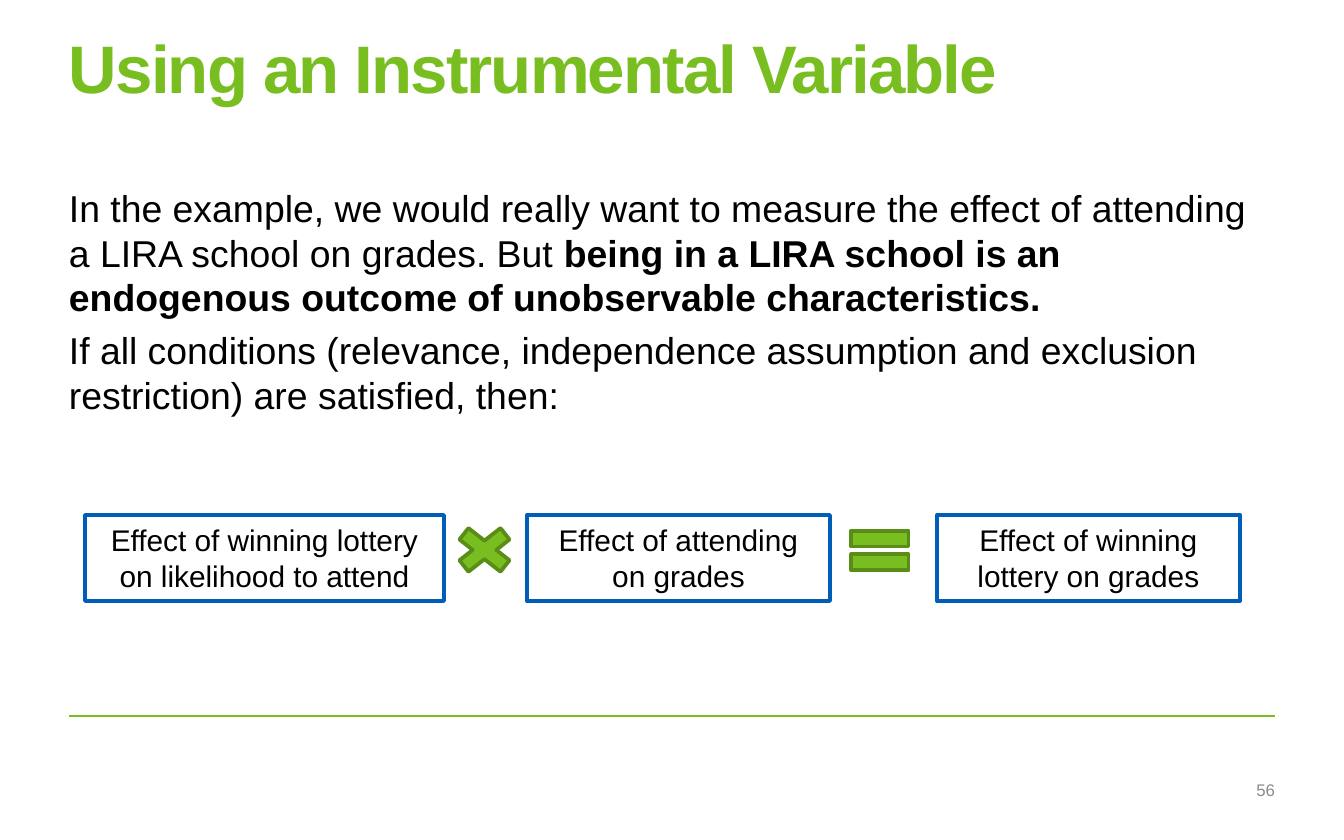
from pptx import Presentation
from pptx.dml.color import RGBColor
from pptx.enum.shapes import MSO_CONNECTOR, MSO_SHAPE
from pptx.enum.text import MSO_ANCHOR, MSO_AUTO_SIZE, PP_ALIGN
from pptx.util import Pt
from lxml import etree

# Content: body paragraphs are lists of (text, bold)
TITLE = "Using an Instrumental Variable"
BODY = [
    [("In the example, we would really want to measure the effect of attending "
      "a LIRA school on grades. But ", False),
     ("being in a LIRA school is an endogenous outcome of unobservable "
      "characteristics.", True)],
    [("If all conditions (relevance, independence assumption and exclusion "
      "restriction) are satisfied, then:", False)],
]
PAGE_NUMBER = "56"
# Equation terms: text, left, width
TERMS = [
    ("Effect of winning lottery on likelihood to attend", 85, 359),
    ("Effect of attending on grades", 527, 303),
    ("Effect of winning lottery on grades", 937, 303),
]
# Equation signs: preset, left, top, width, height
SIGNS = [
    (MSO_SHAPE.MATH_MULTIPLY, 445, 519, 79, 62),
    (MSO_SHAPE.MATH_EQUAL, 841, 517, 78, 67),
]
THEME = {
    "font": "Arial",
    "green": RGBColor.from_string("78BE20"),
    "dark_green": RGBColor.from_string("598D18"),
    "blue": RGBColor.from_string("005EB8"),
    "black": RGBColor.from_string("000000"),
    "white": RGBColor.from_string("FFFFFF"),
    "grey": RGBColor.from_string("8C8C8C"),
    "title_size": 36, "body_size": 20, "term_size": 16, "number_size": 9,
}
PAGE_WIDTH, PAGE_HEIGHT = 1344, 840
MARGIN = 69
CONTENT_WIDTH = PAGE_WIDTH - 2 * MARGIN
TITLE_TOP, BODY_TOP, RULE_Y = 39, 185, 716
TERM_TOP, TERM_HEIGHT = 515, 86


def px(length):
    return round(length * 914400 / 134.4)


def style(span, size, color, bold=False):
    span.font.name = THEME["font"]
    span.font.size = Pt(THEME[size])
    span.font.color.rgb = THEME[color]
    span.font.bold = bold


def prepare(frame, inset=0, anchor=MSO_ANCHOR.TOP):
    frame.word_wrap = True
    frame.auto_size = MSO_AUTO_SIZE.NONE
    frame.vertical_anchor = anchor
    frame.margin_left = frame.margin_right = px(inset)
    frame.margin_top = frame.margin_bottom = px(inset / 2)


def add_box(page, preset, left, top, width, height, fill, line):
    box = page.shapes.add_shape(preset, px(left), px(top), px(width), px(height))
    box.shadow.inherit = False
    box.fill.solid()
    box.fill.fore_color.rgb = THEME[fill]
    box.line.color.rgb = THEME[line]
    box.line.width = Pt(2)
    return box


def main():
    deck = Presentation()
    deck.slide_width, deck.slide_height = px(PAGE_WIDTH), px(PAGE_HEIGHT)
    page = deck.slides.add_slide(deck.slide_layouts[5])

    # Footer rule
    rule = page.shapes.add_connector(MSO_CONNECTOR.STRAIGHT, px(MARGIN), px(RULE_Y),
                                     px(MARGIN + CONTENT_WIDTH), px(RULE_Y))
    rule.line.color.rgb = THEME["green"]
    rule.line.width = Pt(1)
    properties = rule.element.spPr
    etree.SubElement(properties, properties.tag.split("}")[0].replace(
        "presentationml", "drawingml").replace("/2006/main", "/2006/main") + "}effectLst")

    # Title
    title = page.shapes.title
    title.left, title.top = px(MARGIN), px(TITLE_TOP)
    title.width, title.height = px(CONTENT_WIDTH), px(BODY_TOP - TITLE_TOP)
    prepare(title.text_frame)
    title.text_frame.text = TITLE
    para = title.text_frame.paragraphs[0]
    para.alignment = PP_ALIGN.LEFT
    para.line_spacing = 0.85
    style(para.runs[0], "title_size", "green", True)
    para.runs[0].font._element.set("spc", "-100")

    # Body text
    body = page.shapes.add_textbox(px(MARGIN), px(BODY_TOP), px(CONTENT_WIDTH),
                                   px(RULE_Y - BODY_TOP)).text_frame
    prepare(body)
    for index, pieces in enumerate(BODY):
        para = body.add_paragraph() if index else body.paragraphs[0]
        para.space_before = Pt(4)
        for text, bold in pieces:
            span = para.add_run()
            span.text = text
            style(span, "body_size", "black", bold)

    # Page number
    number = page.shapes.add_textbox(px(743), px(780), px(532), px(20)).text_frame
    prepare(number, anchor=MSO_ANCHOR.MIDDLE)
    number.text = PAGE_NUMBER
    number.paragraphs[0].alignment = PP_ALIGN.RIGHT
    style(number.paragraphs[0].runs[0], "number_size", "grey")

    # Equation
    for preset, *place in SIGNS:
        add_box(page, preset, *place, "green", "dark_green")
    for text, left, width in TERMS:
        box = add_box(page, MSO_SHAPE.RECTANGLE, left, TERM_TOP, width, TERM_HEIGHT,
                      "white", "blue")
        prepare(box.text_frame, inset=13)
        box.text_frame.text = text
        para = box.text_frame.paragraphs[0]
        para.alignment = PP_ALIGN.CENTER
        style(para.runs[0], "term_size", "black")

    deck.save("out.pptx")


if __name__ == "__main__":
    main()
